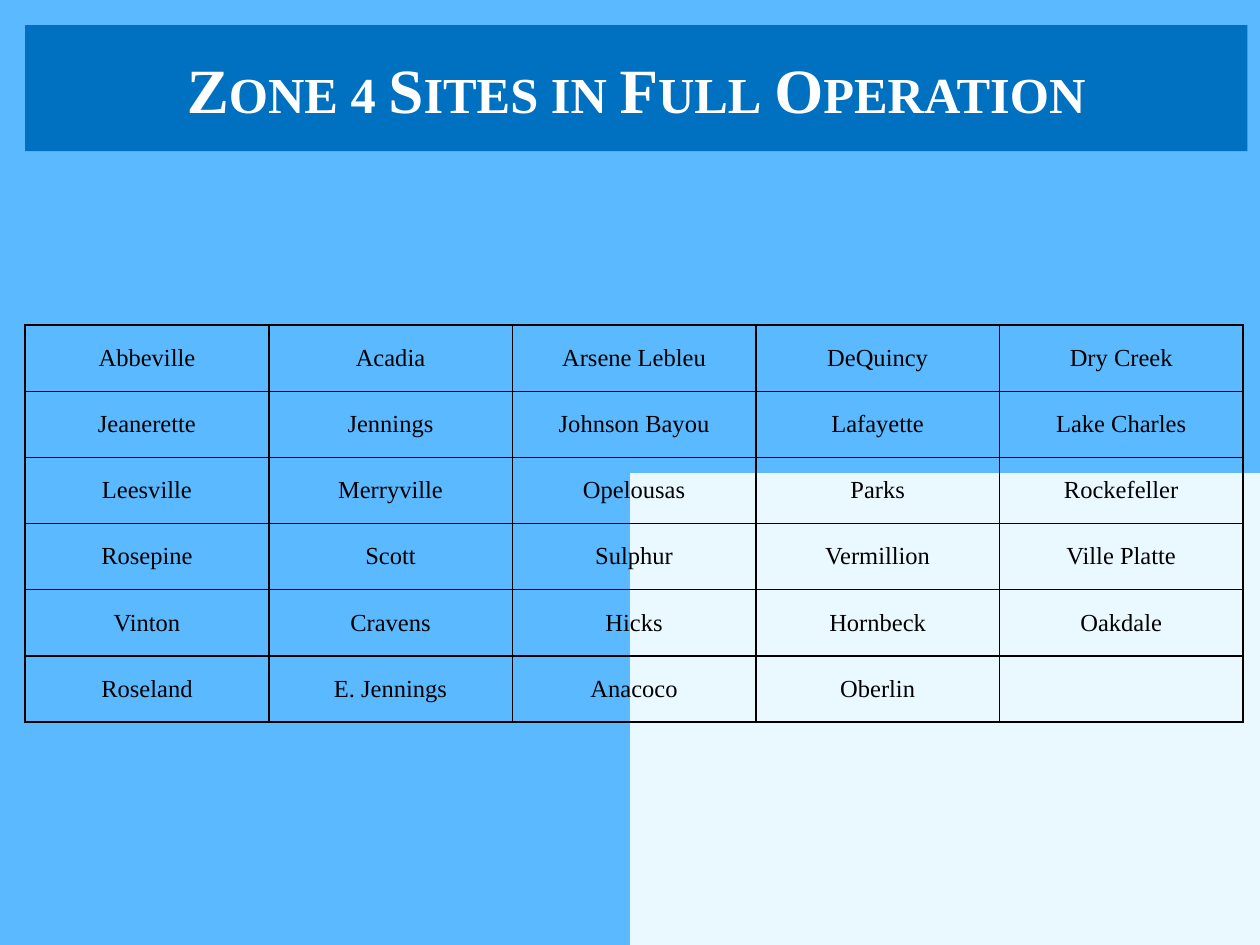
from lxml import etree
from pptx import Presentation
from pptx.dml.color import RGBColor
from pptx.enum.shapes import MSO_SHAPE
from pptx.enum.text import MSO_ANCHOR, PP_ALIGN
from pptx.oxml import parse_xml
from pptx.oxml.ns import nsdecls, qn
from pptx.util import Pt

RECT = MSO_SHAPE.RECTANGLE
MIDDLE = MSO_ANCHOR.MIDDLE
CENTER = PP_ALIGN.CENTER

# Content
TITLE = "Zone 4 Sites in Full Operation"
SITES = [
    ["Abbeville", "Acadia", "Arsene Lebleu", "DeQuincy", "Dry Creek"],
    ["Jeanerette", "Jennings", "Johnson Bayou", "Lafayette", "Lake Charles"],
    ["Leesville", "Merryville", "Opelousas", "Parks", "Rockefeller"],
    ["Rosepine", "Scott", "Sulphur", "Vermillion", "Ville Platte"],
    ["Vinton", "Cravens", "Hicks", "Hornbeck", "Oakdale"],
    ["Roseland", "E. Jennings", "Anacoco", "Oberlin", ""],
]

# Style
FONT = "Times New Roman"
BLACK = RGBColor(0x00, 0x00, 0x00)
WHITE = RGBColor(0xFF, 0xFF, 0xFF)
BLUE = RGBColor(0x00, 0x70, 0xC0)
SKY = RGBColor(0x5B, 0xB9, 0xFF)
PALE = RGBColor(0xEA, 0xF8, 0xFF)

# Layout in points
MARGIN = 14.4
COL_W, ROW_H = 139.2, 37.8
TABLE_TOP = 185.8


def set_background(s, colors):
    """Rectangular gradient centred on the bottom right corner."""
    stops = "".join(f'<a:gs pos="100000"><a:srgbClr val="{c}"/></a:gs>' for c in colors)
    s.element.cSld.insert(0, parse_xml(
        f'<p:bg {nsdecls("p", "a")}><p:bgPr><a:gradFill rotWithShape="1">'
        f'<a:gsLst>{stops}</a:gsLst>'
        '<a:path path="rect"><a:fillToRect l="100000" t="100000"/></a:path>'
        '</a:gradFill><a:effectLst/></p:bgPr></p:bg>'))


def set_borders(cell, color, width):
    tc_pr = cell._tc.get_or_add_tcPr()
    for side in ("a:lnL", "a:lnR", "a:lnT", "a:lnB"):
        ln = etree.SubElement(tc_pr, qn(side), w=str(Pt(width)))
        fill = etree.SubElement(ln, qn("a:solidFill"))
        etree.SubElement(fill, qn("a:srgbClr"), val=str(color))


def set_text(p, text, size, color, bold=False):
    p.alignment = CENTER
    p.font.name, p.font.size, p.font.bold = FONT, Pt(size), bold
    p.font.color.rgb = color
    if text:
        r = p.add_run()
        r.text = text


prs = Presentation()
prs.slide_width, prs.slide_height = Pt(720), Pt(540)
s = prs.slides.add_slide(prs.slide_layouts[6])
set_background(s, [PALE, WHITE, SKY])

# Table of sites
rows, cols = len(SITES), len(SITES[0])
table = s.shapes.add_table(rows, cols, Pt(MARGIN), Pt(TABLE_TOP),
                           Pt(cols * COL_W), Pt(rows * ROW_H)).table
table.first_row = table.horz_banding = False
for col in table.columns:
    col.width = Pt(COL_W)
for row, names in zip(table.rows, SITES):
    row.height = Pt(ROW_H)
    for cell, name in zip(row.cells, names):
        cell.vertical_anchor = MIDDLE
        set_borders(cell, BLACK, 1)
        cell.fill.background()
        set_text(cell.text_frame.paragraphs[0], name, 14, BLACK)

# Title banner
banner = s.shapes.add_shape(RECT, Pt(MARGIN), Pt(MARGIN), Pt(698.4), Pt(72))
banner.shadow.inherit = False
banner.fill.solid()
banner.fill.fore_color.rgb = BLUE
banner.line.fill.background()
tf = banner.text_frame
tf.word_wrap = True
tf.vertical_anchor = MIDDLE
p = tf.paragraphs[0]
set_text(p, TITLE, 36, WHITE, bold=True)
p.runs[0].font._element.set("cap", "small")

prs.save("out.pptx")
